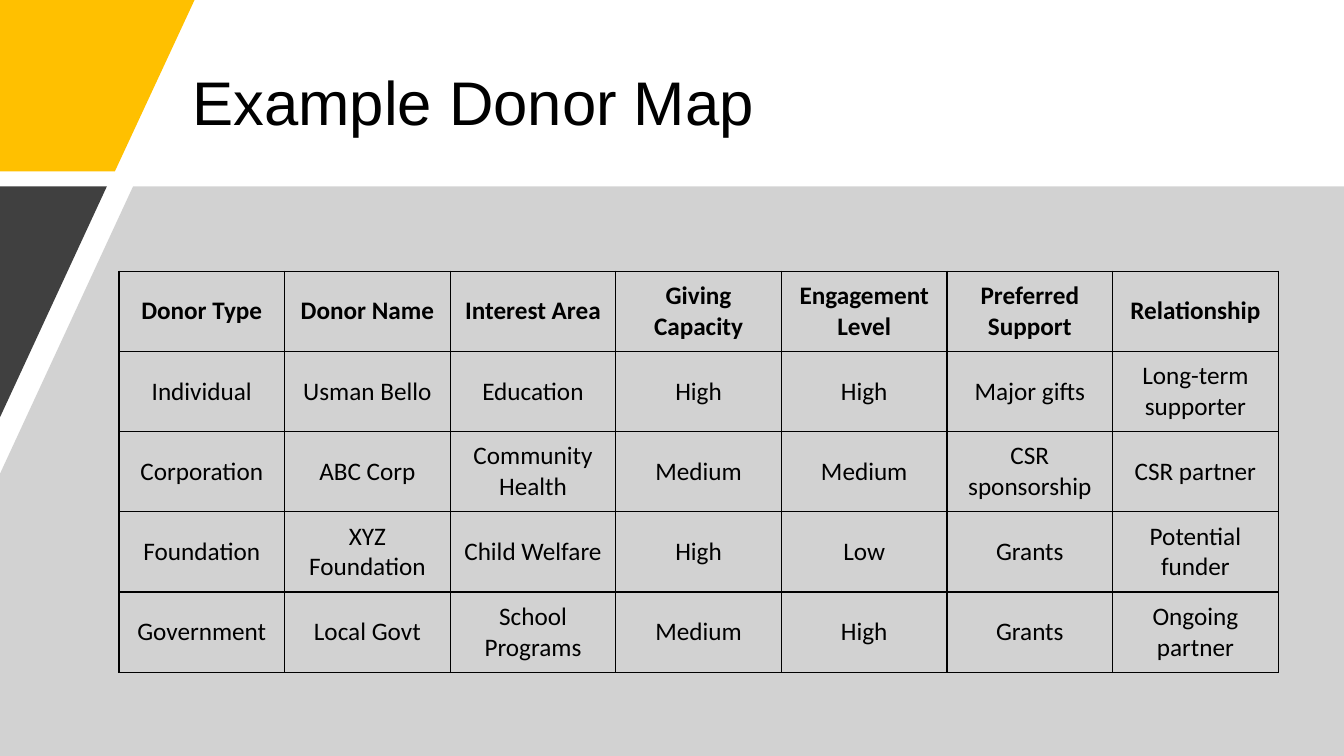
import pptx
import pptx.dml.color
import pptx.enum.text
import pptx.oxml
import pptx.oxml.ns
import pptx.util
from lxml import etree

WIDTH, HEIGHT = 13.33, 7.5
BAND_TOP = 1.85

DONORS = [
    ["Donor Type", "Donor Name", "Interest Area", "Giving Capacity",
     "Engagement Level", "Preferred Support", "Relationship"],
    ["Individual", "Usman Bello", "Education", "High",
     "High", "Major gifts", "Long-term supporter"],
    ["Corporation", "ABC Corp", "Community Health", "Medium",
     "Medium", "CSR sponsorship", "CSR partner"],
    ["Foundation", "XYZ Foundation", "Child Welfare", "High",
     "Low", "Grants", "Potential funder"],
    ["Government", "Local Govt", "School Programs", "Medium",
     "High", "Grants", "Ongoing partner"],
]


def inches(*lengths):
    return [pptx.util.Inches(length) for length in lengths]


def color(hex_string):
    return pptx.dml.color.RGBColor.from_string(hex_string)


def style_font(font, name, size, bold=False):
    font.name = name
    font.size = pptx.util.Pt(size)
    font.bold = bold
    font.color.rgb = color("000000")


def add_polygon(s, points, fill, alpha=None):
    start, *rest = [tuple(inches(*point)) for point in points]
    builder = s.shapes.build_freeform(*start)
    builder.add_line_segments(rest, close=True)
    sp = builder.convert_to_shape()
    sp.shadow.inherit = False
    sp.fill.solid()
    sp.fill.fore_color.rgb = color(fill)
    sp.line.fill.background()
    if alpha is not None:
        clr = sp._element.spPr.find(".//" + pptx.oxml.ns.qn("a:srgbClr"))
        etree.SubElement(clr, pptx.oxml.ns.qn("a:alpha"), val=str(alpha * 1000))


def add_backdrop(s, left, top, width, height):
    right, bottom = left + width, top + height
    band = top + BAND_TOP
    # Yellow corner
    add_polygon(s, [(left, top), (left + 1.93, top), (left + 1.14, top + 1.7),
                    (left, top + 1.7)], "FFC000")
    # Grey panel with its slanted edge
    add_polygon(s, [(left + 1.32, band), (right, band), (right, bottom),
                    (left, bottom), (left, top + 4.7)], "A6A6A6", alpha=50)
    # Dark wedge
    add_polygon(s, [(left, band), (left + 1.06, band), (left, top + 4.14)],
                "404040")


def add_title(s, text, left, top, width, height):
    sp = s.shapes.add_textbox(*inches(left, top, width, height))
    tf = sp.text_frame
    tf.word_wrap = True
    tf.vertical_anchor = pptx.enum.text.MSO_ANCHOR.MIDDLE
    p = tf.paragraphs[0]
    p.text = text
    p.line_spacing = 0.9
    style_font(p.font, "Arial", 44)


def set_borders(cell, hex_string, points):
    tc_pr = cell._tc.get_or_add_tcPr()
    for index, side in enumerate("LRTB"):
        tc_pr.insert(index, pptx.oxml.parse_xml(
            f'<a:ln{side} {pptx.oxml.ns.nsdecls("a")} w="{pptx.util.Pt(points)}">'
            f'<a:solidFill><a:srgbClr val="{hex_string}"/></a:solidFill></a:ln{side}>'))


def add_donor_table(s, rows, left, top, width, height):
    n_rows, n_cols = len(rows), len(rows[0])
    frame = s.shapes.add_table(n_rows, n_cols, *inches(left, top, width, height))
    table = frame.table
    table.horz_banding = False
    for r, values in enumerate(rows):
        for c, value in enumerate(values):
            cell = table.cell(r, c)
            cell.fill.background()
            cell.vertical_anchor = pptx.enum.text.MSO_ANCHOR.MIDDLE
            set_borders(cell, "000000", 1)
            p = cell.text_frame.paragraphs[0]
            p.text = value
            p.alignment = pptx.enum.text.PP_ALIGN.CENTER
            style_font(p.font, "Calibri", 18, bold=r == 0)


def main():
    prs = pptx.Presentation()
    prs.slide_width, prs.slide_height = inches(WIDTH, HEIGHT)
    s = prs.slides.add_slide(prs.slide_layouts[6])
    add_backdrop(s, 0, 0, WIDTH, HEIGHT)
    add_title(s, "Example Donor Map", 1.81, 0.4, 10.24, 1.3)
    add_donor_table(s, DONORS, 1.18, 2.69, 11.5, 3.98)
    prs.save("out.pptx")


if __name__ == "__main__":
    main()
